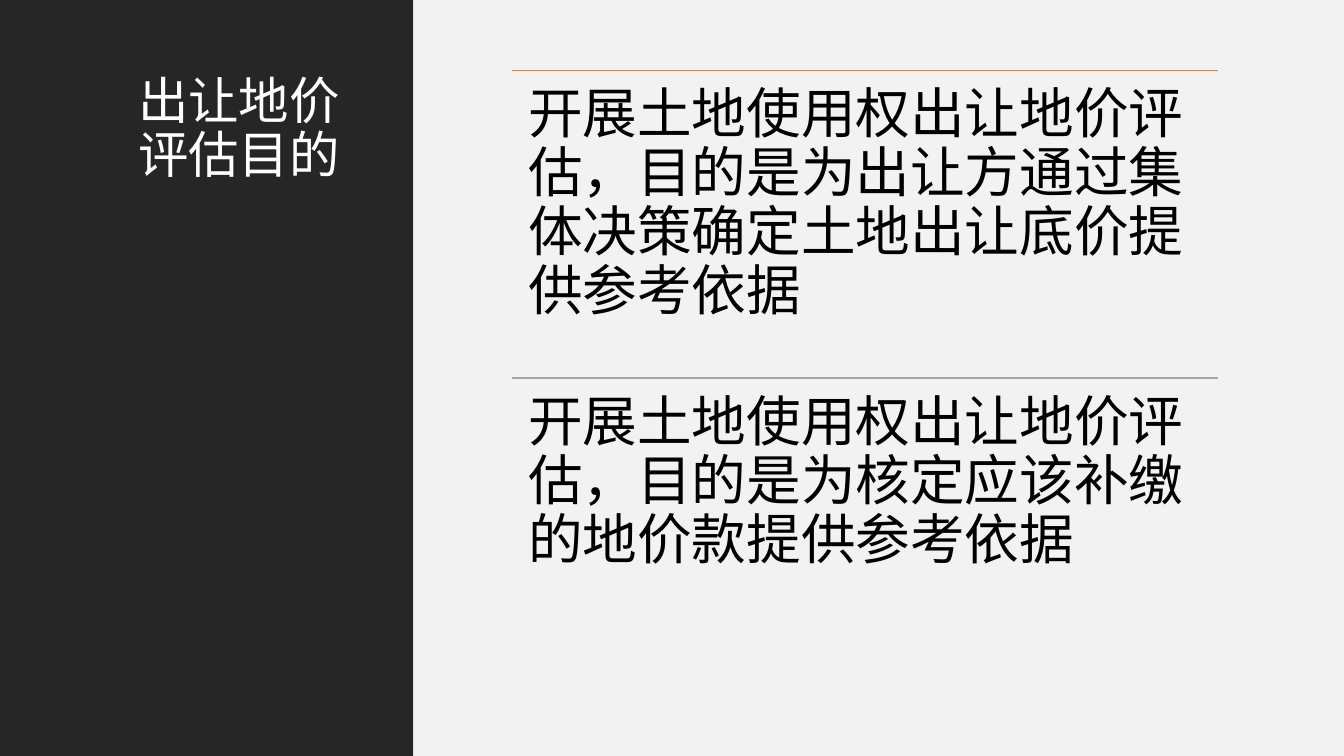
from lxml import etree
from pptx import Presentation
from pptx.dml.color import RGBColor
from pptx.enum.shapes import MSO_CONNECTOR, MSO_SHAPE
from pptx.enum.text import MSO_ANCHOR, MSO_AUTO_SIZE, PP_ALIGN
from pptx.oxml.ns import qn
from pptx.util import Pt

RECT = MSO_SHAPE.RECTANGLE
STRAIGHT = MSO_CONNECTOR.STRAIGHT
TOP = MSO_ANCHOR.TOP
NO_FIT = MSO_AUTO_SIZE.NONE
LEFT = PP_ALIGN.LEFT

COLORS = {
    "panel": "F2F2F2",
    "sidebar": "262626",
    "title": "FFFFFF",
    "body": "000000",
    "orange": "ED7D31",
    "gray": "A5A5A5",
}
WIDTH, HEIGHT = 960, 540
SIDEBAR_W = 295.2
PURPOSE_X, PURPOSE_Y, PURPOSE_W, PURPOSE_H = 365.8, 50.4, 504, 219.6
PURPOSES = [
    ("orange", "开展土地使用权出让地价评估，目的是为出让方通过集体决策确定土地出让底价提供参考依据"),
    ("gray", "开展土地使用权出让地价评估，目的是为核定应该补缴的地价款提供参考依据"),
]


class Deck:
    font = "Noto Sans CJK SC"

    def __init__(self, slide):
        self.s = slide

    def color(self, name):
        return RGBColor.from_string(COLORS[name])

    def rect(self, x, y, w, h, fill):
        sp = self.s.shapes.add_shape(RECT, Pt(x), Pt(y), Pt(w), Pt(h))
        sp.shadow.inherit = False
        sp.fill.solid()
        sp.fill.fore_color.rgb = self.color(fill)
        sp.line.fill.background()

    def rule(self, x, y, w, color):
        ln = self.s.shapes.add_connector(STRAIGHT, Pt(x), Pt(y), Pt(x + w), Pt(y))
        ln.line.color.rgb = self.color(color)
        ln.line.width = Pt(1)
        etree.SubElement(ln._element.spPr, qn("a:effectLst"))

    def set_text(self, sp, text, size, color, inset_x, inset_y):
        tf = sp.text_frame
        tf.word_wrap = True
        tf.auto_size = NO_FIT
        tf.vertical_anchor = TOP
        tf.margin_left = tf.margin_right = Pt(inset_x)
        tf.margin_top = tf.margin_bottom = Pt(inset_y)
        p = tf.paragraphs[0]
        p.text = text
        p.alignment = LEFT
        p.line_spacing = 0.9
        p.font.size = Pt(size)
        p.font.name = self.font
        p.font.color.rgb = self.color(color)
        # East Asian typeface follows the Latin one
        latin = p._p.pPr.find(qn("a:defRPr")).find(qn("a:latin"))
        ea = etree.Element(qn("a:ea"), typeface=self.font)
        latin.addnext(ea)

    def title(self, x, y, w, h, text):
        sp = self.s.shapes.title
        sp.left, sp.top, sp.width, sp.height = Pt(x), Pt(y), Pt(w), Pt(h)
        self.set_text(sp, text, 36, "title", 7.2, 3.6)
        # Bring the title in front of the panels
        self.s.shapes._spTree.append(sp._element)

    def body(self, x, y, w, h, text):
        sp = self.s.shapes.add_textbox(Pt(x), Pt(y), Pt(w), Pt(h))
        self.set_text(sp, text, 39, "body", 11.5, 11.5)


def main():
    prs = Presentation()
    prs.slide_width, prs.slide_height = Pt(WIDTH), Pt(HEIGHT)
    deck = Deck(prs.slides.add_slide(prs.slide_layouts[5]))

    # Background panels and title
    deck.rect(SIDEBAR_W, 0, WIDTH - SIDEBAR_W, HEIGHT, "panel")
    deck.rect(0, 0, SIDEBAR_W, HEIGHT, "sidebar")
    deck.title(91.4, 50.4, 172.8, 439.2, "出让地价评估目的")

    # Purposes, each under its own rule
    for i, (color, text) in enumerate(PURPOSES):
        y = PURPOSE_Y + i * PURPOSE_H
        deck.rule(PURPOSE_X, y, PURPOSE_W, color)
        deck.body(PURPOSE_X, y, PURPOSE_W, PURPOSE_H, text)

    prs.save("out.pptx")


if __name__ == "__main__":
    main()
